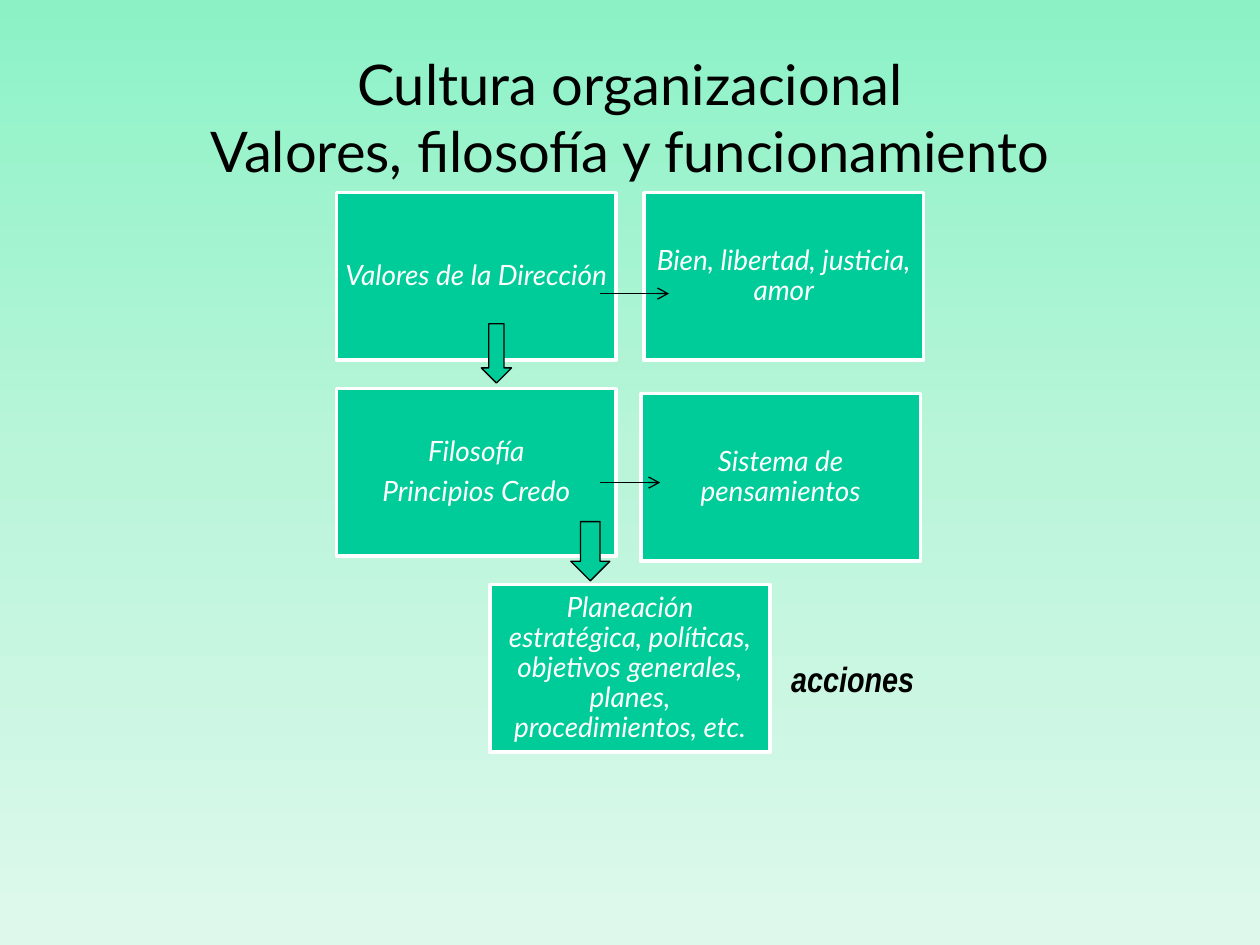
import copy
import pptx
import pptx.util
import pptx.dml.color
import pptx.enum.shapes
import pptx.enum.text
import pptx.oxml
import pptx.oxml.ns

RGBColor = pptx.dml.color.RGBColor
SHAPE = pptx.enum.shapes.MSO_SHAPE
ALIGN = pptx.enum.text.PP_ALIGN
ANCHOR = pptx.enum.text.MSO_ANCHOR
Inches, Pt, qn = pptx.util.Inches, pptx.util.Pt, pptx.oxml.ns.qn

GREEN = RGBColor(0x00, 0xCC, 0x99)
WHITE = RGBColor(0xFF, 0xFF, 0xFF)
BLACK = RGBColor(0x00, 0x00, 0x00)
SKY = [RGBColor(0x8C, 0xF2, 0xC6), RGBColor(0xBA, 0xF5, 0xDA), RGBColor(0xDE, 0xF9, 0xEC)]

# Diagram grid: a box plus the gap to the next one
BOX_W, BOX_H = 2.22, 1.33
COL, ROW = 2.44, 1.555

# Column, row, paragraphs
BOXES = [
    (0, 0, ["Valores de la Dirección"]),
    (1, 0, ["Bien, libertad, justicia, amor"]),
    (0, 1, ["Filosofía", "Principios Credo"]),
    (0.99, 1.025, ["Sistema de pensamientos"]),
    (0.5, 2, ["Planeación estratégica, políticas, objetivos generales, planes, procedimientos, etc."]),
]
# Offsets inside the diagram: left, top, length
LINKS = [(2.09, 0.8, 0.55), (2.09, 2.3, 0.48)]
# Offsets inside the diagram: left, top, width
DOWN_ARROWS = [(1.15, 1.04, 0.24), (1.86, 2.61, 0.31)]


def style_font(font, name, size, color, bold=False, italic=False):
    font.name, font.size = name, Pt(size)
    font.bold, font.italic = bold, italic
    font.color.rgb = color


def paint_background(s):
    fill = s.background.fill
    fill.gradient()
    fill.gradient_angle = 270
    stops = s._element.find(".//" + qn("a:gsLst"))
    stops.insert(1, copy.deepcopy(stops[0]))
    for i, (stop, color) in enumerate(zip(fill.gradient_stops, SKY)):
        stop.color.rgb = color
        stop.position = i / 2


def add_title(s, left, top, width, height):
    sp = s.shapes.title
    sp.left, sp.top, sp.width, sp.height = map(Inches, (left, top, width, height))
    tf = sp.text_frame
    tf.text = "Cultura organizacional\vValores, filosofía y funcionamiento"
    tf.vertical_anchor = ANCHOR.MIDDLE
    p = tf.paragraphs[0]
    p.alignment = ALIGN.CENTER
    style_font(p.font, "Lato", 32, BLACK)


def add_shape(s, kind, left, top, width, height, line, weight):
    sp = s.shapes.add_shape(kind, *map(Inches, (left, top, width, height)))
    sp.shadow.inherit = False
    sp.fill.solid()
    sp.fill.fore_color.rgb = GREEN
    sp.line.color.rgb = line
    sp.line.width = Pt(weight)
    return sp


def add_box(s, left, top, lines):
    sp = add_shape(s, SHAPE.RECTANGLE, left, top, BOX_W, BOX_H, WHITE, 2)
    tf = sp.text_frame
    tf.word_wrap = True
    tf.vertical_anchor = ANCHOR.MIDDLE
    tf.margin_left = tf.margin_right = tf.margin_top = tf.margin_bottom = Inches(0.07)
    tf.text = "\n".join(lines)
    for p in tf.paragraphs:
        p.alignment = ALIGN.CENTER
        p.line_spacing = 0.9
        p.space_after = Pt(5.6)
        style_font(p.font, "Lato", 16, WHITE, italic=True)


def add_link(s, left, top, length):
    line = s.shapes.add_connector(
        pptx.enum.shapes.MSO_CONNECTOR.STRAIGHT,
        *map(Inches, (left, top, left + length, top)))
    line.line.color.rgb = BLACK
    line.line.width = Pt(0.75)
    ln = line.line._get_or_add_ln()
    ln.append(pptx.oxml.parse_xml(
        '<a:tailEnd %s type="arrow"/>' % pptx.oxml.ns.nsdecls("a")))
    line._element.spPr.append(pptx.oxml.parse_xml(
        "<a:effectLst %s/>" % pptx.oxml.ns.nsdecls("a")))


def add_diagram(s, left, top):
    for col, row, lines in BOXES:
        add_box(s, left + col * COL, top + row * ROW, lines)
    for x, y, length in LINKS:
        add_link(s, left + x, top + y, length)
    for x, y, width in DOWN_ARROWS:
        add_shape(s, SHAPE.DOWN_ARROW, left + x, top + y, width, 0.47, BLACK, 0.75)


def add_label(s, left, top, width, height):
    tf = s.shapes.add_textbox(*map(Inches, (left, top, width, height))).text_frame
    tf.word_wrap = True
    tf.text = "acciones"
    style_font(tf.paragraphs[0].font, "Arial Narrow", 20, BLACK, bold=True, italic=True)


def main():
    prs = pptx.Presentation()
    prs.slide_width, prs.slide_height = Inches(10), Inches(7.5)
    s = prs.slides.add_slide(prs.slide_layouts[5])
    paint_background(s)
    add_title(s, 0.5, 0.3, 9, 1.25)
    add_diagram(s, 2.67, 1.53)
    add_label(s, 6.18, 5.17, 2.05, 0.44)
    prs.save("out.pptx")


if __name__ == "__main__":
    main()
